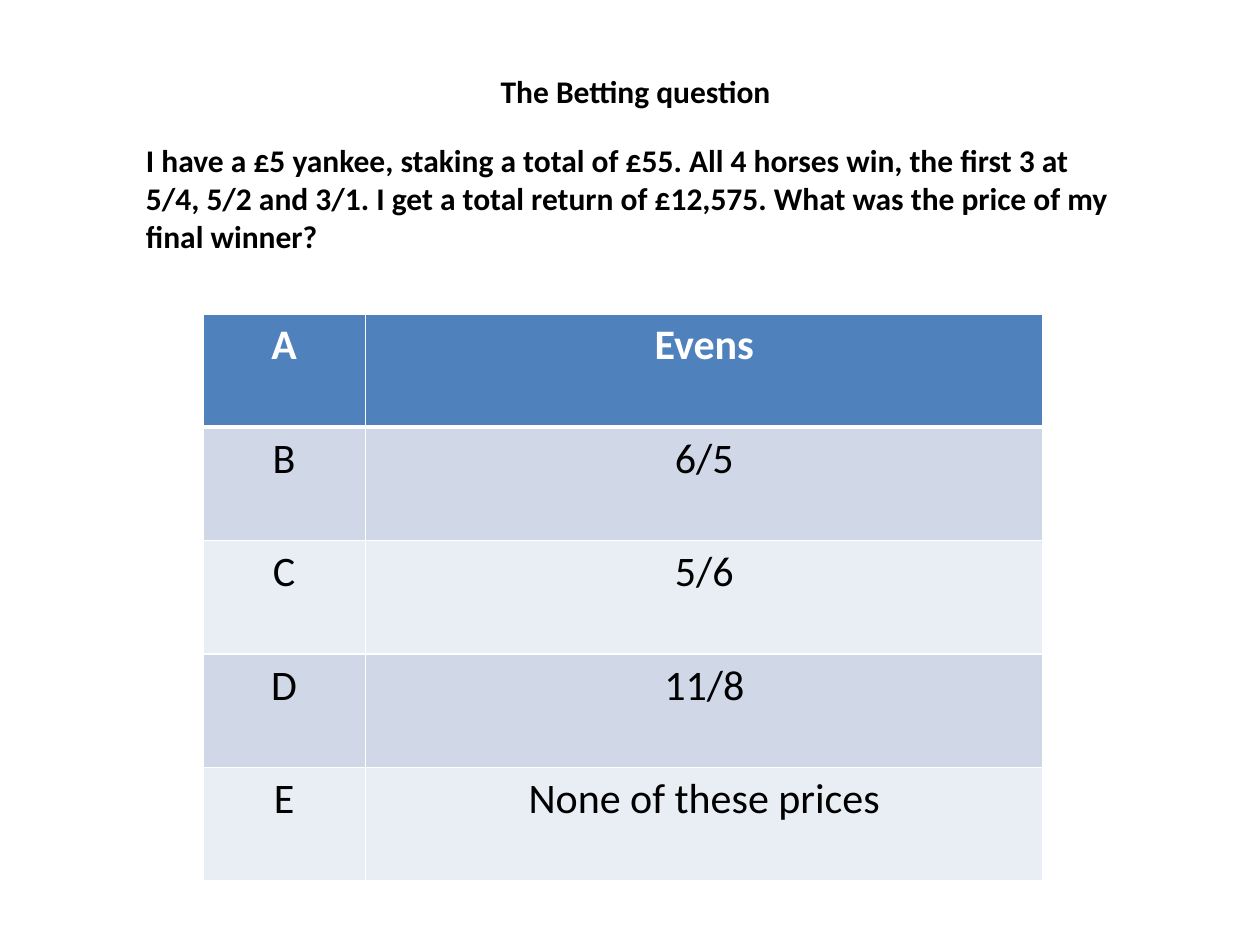
from dataclasses import dataclass
from typing import Any

from lxml import etree
from pptx import Presentation
from pptx import util as u
from pptx.dml.color import RGBColor
from pptx.enum import text
from pptx.oxml.ns import qn

TITLE = "The Betting question"
QUESTION = (
    "I have a £5 yankee, staking a total of £55. All 4 horses win, the first 3 at "
    "5/4, 5/2 and 3/1. I get a total return of £12,575. What was the price of my "
    "final winner?"
)
ANSWERS = [
    ("A", "Evens"),
    ("B", "6/5"),
    ("C", "5/6"),
    ("D", "11/8"),
    ("E", "None of these prices"),
]


def colour(hex_value):
    return RGBColor.from_string(hex_value)


@dataclass
class QuizSlide:
    """Style and current slide of a quiz, measured on a grid of 100 columns by 75 rows."""

    slide: Any
    font: str = "Calibri"
    ink: str = "000000"
    paper: str = "FFFFFF"
    header: str = "4F81BD"
    bands: tuple = ("D0D8E8", "E9EDF4")
    unit: int = u.Inches(0.1)

    def grid(self, *cells):
        return [u.Emu(round(cell * self.unit)) for cell in cells]

    def set_wording(self, frame, wording, size, ink, bold, align):
        frame.text = wording
        paragraph = frame.paragraphs[0]
        paragraph.alignment = align
        font = paragraph.runs[0].font
        font.name, font.size, font.bold = self.font, u.Pt(size), bold
        font.color.rgb = colour(ink)

    def heading(self, box, wording, align):
        box.text_frame.word_wrap = True
        box.text_frame.auto_size = text.MSO_AUTO_SIZE.NONE
        box.text_frame.vertical_anchor = text.MSO_ANCHOR.TOP
        self.set_wording(box.text_frame, wording, 18, self.ink, True, align)

    def title(self, wording, *place):
        box = self.slide.shapes.title
        box.left, box.top, box.width, box.height = self.grid(*place)
        self.heading(box, wording, text.PP_ALIGN.CENTER)

    def question(self, wording, *place):
        box = self.slide.shapes.add_textbox(*self.grid(*place))
        self.heading(box, wording, text.PP_ALIGN.LEFT)

    def border(self, cell, side, points):
        line = etree.SubElement(
            cell._tc.get_or_add_tcPr(), qn(f"a:ln{side}"), w=str(u.Pt(points))
        )
        fill = etree.SubElement(line, qn("a:solidFill"))
        etree.SubElement(fill, qn("a:srgbClr"), val=self.paper)

    def answers(self, choices, left, top, widths, row_height):
        place = self.grid(left, top, sum(widths), row_height * len(choices))
        table = self.slide.shapes.add_table(len(choices), len(widths), *place).table
        for column, width in zip(table.columns, self.grid(*widths)):
            column.width = width
        for index, choice in enumerate(choices):
            is_header = index == 0
            table.rows[index].height = self.grid(row_height)[0]
            fill = self.header if is_header else self.bands[(index - 1) % 2]
            ink = self.paper if is_header else self.ink
            thickness = {"L": 1, "R": 1, "T": 3 if index == 1 else 1, "B": 3 if is_header else 1}
            for cell, wording in zip(table.rows[index].cells, choice):
                for side, points in thickness.items():
                    self.border(cell, side, points)
                cell.fill.solid()
                cell.fill.fore_color.rgb = colour(fill)
                self.set_wording(
                    cell.text_frame, wording, 24, ink, is_header, text.PP_ALIGN.CENTER
                )


def main():
    deck = Presentation()
    deck.slide_width, deck.slide_height = u.Inches(10), u.Inches(7.5)
    quiz = QuizSlide(deck.slides.add_slide(deck.slide_layouts[5]))
    quiz.title(TITLE, 27.2, 5.2, 46.5, 4)
    quiz.question(QUESTION, 10.6, 10.7, 79.5, 10.1)
    quiz.answers(ANSWERS, 16.1, 24.9, (12.9, 53.8), 9)
    deck.save("out.pptx")


if __name__ == "__main__":
    main()
